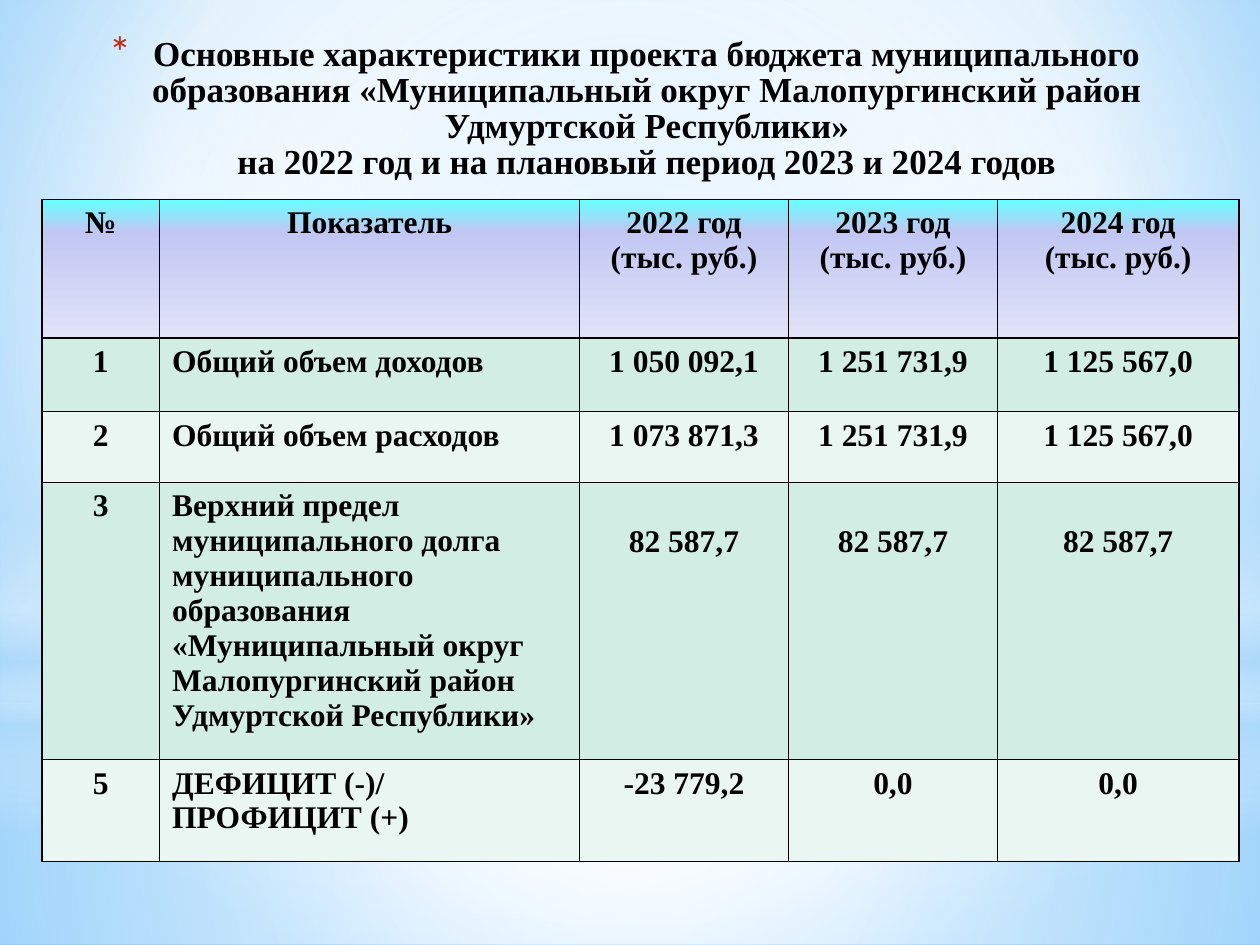
from dataclasses import dataclass

import pptx
import pptx.dml.color
import pptx.enum.shapes
import pptx.enum.text
import pptx.oxml
import pptx.oxml.ns
import pptx.util

SHAPE = pptx.enum.shapes.MSO_SHAPE
ALIGN = pptx.enum.text.PP_ALIGN
NS = pptx.oxml.ns.nsdecls("a")


@dataclass(frozen=True)
class Theme:
    font: str = "Times New Roman"
    title_size: int = 20
    body_size: int = 18
    line_spacing: float = 0.86
    ink: str = "000000"
    bullet: str = "C3260C"
    bands: tuple = ("D2EDE3", "EAF6F2")
    header: tuple = ((0, "66FFFF"), (23, "C1C7F2"), (100, "E1E3F8"))
    sky: tuple = ((0, "9ED5FF"), (60, "FFFFFF"), (100, "5BB9FF"))
    lower: tuple = ((0, "FFFFFF", 91), (37, "FFFFFF", 76), (100, "B4DCFA", 79))
    upper: tuple = ((0, "FFFFFF", 89), (48, "FFFFFF", 62), (100, "B4DCFA", 79))
    horizon: tuple = ((0, "FFFFFF", 0), (29, "FFFFFF", 30), (45, "B4DCFA", 40),
                      (55, "FFFFFF", 26), (65, "B4DCFA", 60), (100, "FFFFFF", 0))
    glow: tuple = ((0, "FFFFFF", 100), (56, "FFFFFF", 0))


class Deck:
    COLS, ROWS = 120, 90

    def __init__(self, theme):
        self.theme = theme
        self.prs = pptx.Presentation()
        self.prs.slide_width = pptx.util.Inches(10)
        self.prs.slide_height = pptx.util.Inches(7.5)
        self.s = self.prs.slides.add_slide(self.prs.slide_layouts[6])

    def x(self, cols):
        return round(self.prs.slide_width * cols / self.COLS)

    def y(self, rows):
        return round(self.prs.slide_height * rows / self.ROWS)

    def box(self, left, top, width, height):
        return self.x(left), self.y(top), self.x(width), self.y(height)

    def gradient(self, fill, parent, stops, focus=None):
        gs = ""
        for pos, color, *alpha in stops:
            opacity = f'<a:alpha val="{alpha[0] * 1000}"/>' if alpha else ""
            gs += (f'<a:gs pos="{pos * 1000}"><a:srgbClr val="{color}">'
                   f'{opacity}</a:srgbClr></a:gs>')
        if focus:
            rect = " ".join(f'{k}="{v * 1000}"' for k, v in zip("ltrb", focus))
            way = f'<a:path path="circle"><a:fillToRect {rect}/></a:path>'
        else:
            way = '<a:lin ang="5400000" scaled="0"/>'
        fill.solid()
        solid = parent.find(pptx.oxml.ns.qn("a:solidFill"))
        parent.replace(solid, pptx.oxml.parse_xml(
            f'<a:gradFill {NS} rotWithShape="1"><a:gsLst>{gs}</a:gsLst>{way}</a:gradFill>'))

    def background(self, stops, focus):
        fill = self.s.background.fill
        fill.solid()
        self.gradient(fill, self.s._element.find(".//" + pptx.oxml.ns.qn("p:bgPr")),
                      stops, focus)

    def panel(self, kind, at, stops, focus=None):
        sp = self.s.shapes.add_shape(kind, *self.box(*at))
        sp.shadow.inherit = False
        sp.line.fill.background()
        self.gradient(sp.fill, sp._element.spPr, stops, focus)

    def set_text(self, tf, text, size, align):
        tf.text = text
        for p in tf.paragraphs:
            p.alignment = align
            for r in p.runs:
                r.font.name = self.theme.font
                r.font.size = pptx.util.Pt(size)
                r.font.bold = True
                r.font.color.rgb = pptx.dml.color.RGBColor.from_string(self.theme.ink)

    def title(self, at, text):
        tf = self.s.shapes.add_textbox(*self.box(*at)).text_frame
        tf.word_wrap = True
        self.set_text(tf, text, self.theme.title_size, ALIGN.CENTER)
        p = tf.paragraphs[0]
        p.line_spacing = self.theme.line_spacing
        pPr = p._p.get_or_add_pPr()
        indent = pptx.util.Inches(0.35)
        pPr.set("marL", str(indent))
        pPr.set("indent", str(-indent))
        for bullet in (f'<a:buClr {NS}><a:srgbClr val="{self.theme.bullet}"/></a:buClr>',
                       f'<a:buSzPct {NS} val="128000"/>',
                       f'<a:buFont {NS} typeface="+mj-lt"/>',
                       f'<a:buChar {NS} char="*"/>'):
            pPr.append(pptx.oxml.parse_xml(bullet))

    def borders(self, cell):
        for i, side in enumerate(("lnL", "lnR", "lnT", "lnB")):
            cell._tc.tcPr.insert(i, pptx.oxml.parse_xml(
                f'<a:{side} {NS} w="{pptx.util.Pt(1)}"><a:solidFill>'
                f'<a:srgbClr val="{self.theme.ink}"/></a:solidFill></a:{side}>'))

    def table(self, left, top, widths, heights, rows, lowered_row):
        at = self.box(left, top, sum(widths), sum(heights))
        table = self.s.shapes.add_table(len(rows), len(widths), *at).table
        table.first_row = table.horz_banding = False
        for column, width in zip(table.columns, widths):
            column.width = self.x(width)
        for i, (row, height, texts) in enumerate(zip(table.rows, heights, rows)):
            row.height = self.y(height)
            for j, (cell, text) in enumerate(zip(row.cells, texts)):
                align = ALIGN.LEFT if i and j == 1 else ALIGN.CENTER
                self.set_text(cell.text_frame, text, self.theme.body_size, align)
                if i == lowered_row and j > 1:
                    cell.margin_top = pptx.util.Inches(0.33)
                if i:
                    cell.fill.solid()
                    cell.fill.fore_color.rgb = pptx.dml.color.RGBColor.from_string(
                        self.theme.bands[(i - 1) % 2])
                else:
                    self.gradient(cell.fill, cell._tc.get_or_add_tcPr(), self.theme.header)
                self.borders(cell)


def main():
    theme = Theme()
    deck = Deck(theme)
    center = (50, 50, 50, 50)
    deck.background(theme.sky, (20, 10, 20, 60))
    deck.panel(SHAPE.RECTANGLE, (0, 67, 120, 23), theme.lower, center)
    deck.panel(SHAPE.RECTANGLE, (0, 0, 120, 67), theme.upper, center)
    deck.panel(SHAPE.RECTANGLE, (0, 49.5, 120, 30), theme.horizon)
    deck.panel(SHAPE.OVAL, (0, 21, 120, 67), theme.glow, center)
    deck.title((4, 3, 111, 14),
               "Основные характеристики проекта бюджета муниципального образования "
               "«Муниципальный округ Малопургинский район Удмуртской Республики»\v"
               "на 2022 год и на плановый период 2023 и 2024 годов")
    debt = ("Верхний предел муниципального долга муниципального образования "
            "«Муниципальный округ Малопургинский район Удмуртской Республики»")
    rows = [
        ("№", "Показатель", "2022 год (тыс. руб.)", "2023 год (тыс. руб.)",
         "2024 год\n(тыс. руб.)"),
        ("1", "Общий объем доходов", "1 050 092,1", "1 251 731,9", "1 125 567,0"),
        ("2", "Общий объем расходов", "1 073 871,3", "1 251 731,9", "1 125 567,0"),
        ("3", debt, "82 587,7", "82 587,7", "82 587,7"),
        ("5", "ДЕФИЦИТ (-)/\nПРОФИЦИТ (+)", "-23 779,2", "0,0", "0,0"),
    ]
    deck.table(4, 19, (11.2, 40, 19.9, 19.9, 23), (13.2, 7, 6.75, 25.8, 9.7), rows,
               lowered_row=3)
    deck.prs.save("out.pptx")


if __name__ == "__main__":
    main()
